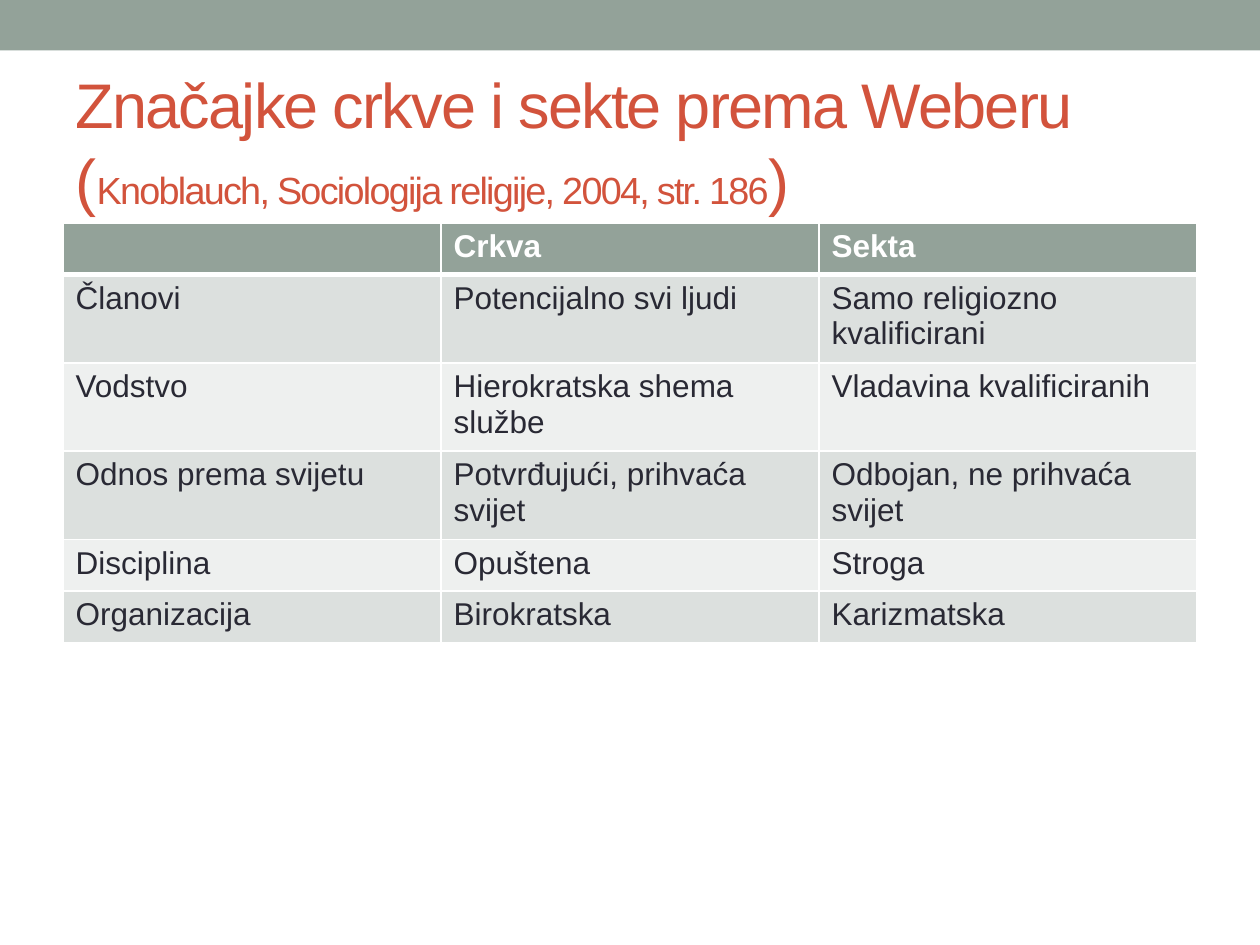
"""Build a slide with a table comparing church and sect after Weber."""
from dataclasses import dataclass

from lxml import etree
from pptx import Presentation
from pptx.dml.color import RGBColor
from pptx.enum.shapes import MSO_SHAPE
from pptx.enum.text import MSO_ANCHOR, MSO_AUTO_SIZE, PP_ALIGN
from pptx.oxml.ns import qn
from pptx.util import Inches, Pt

RECTANGLE = MSO_SHAPE.RECTANGLE
MIDDLE = MSO_ANCHOR.MIDDLE
NO_AUTOFIT = MSO_AUTO_SIZE.NONE
LEFT = PP_ALIGN.LEFT

SAGE = RGBColor(0x93, 0xA2, 0x99)
BAND_DARK = RGBColor(0xDC, 0xE0, 0xDE)
BAND_LIGHT = RGBColor(0xEE, 0xF0, 0xEF)
WHITE = RGBColor(0xFF, 0xFF, 0xFF)
INK = RGBColor(0x29, 0x29, 0x34)
RUST = RGBColor(0xD2, 0x53, 0x3C)
FONT = "Arial"


@dataclass(frozen=True)
class TitlePart:
    text: str
    size: float


@dataclass(frozen=True)
class TableRow:
    texts: tuple[str, str, str]
    height: float


TITLE_PARTS = (
    TitlePart("Značajke crkve i sekte prema Weberu (", 36),
    TitlePart("Knoblauch, Sociologija religije, 2004, str. 186", 21.6),
    TitlePart(")", 36),
)
ROWS = (
    TableRow(("", "Crkva", "Sekta"), 0.41),
    TableRow(("Članovi", "Potencijalno svi ljudi", "Samo religiozno kvalificirani"), 0.7),
    TableRow(("Vodstvo", "Hierokratska shema službe", "Vladavina kvalificiranih"), 0.7),
    TableRow(("Odnos prema svijetu", "Potvrđujući, prihvaća svijet", "Odbojan, ne prihvaća svijet"), 0.7),
    TableRow(("Disciplina", "Opuštena", "Stroga"), 0.41),
    TableRow(("Organizacija", "Birokratska", "Karizmatska"), 0.41),
)


def format_font(font, color: RGBColor, size: float, bold: bool = False) -> None:
    for name, value in {"name": FONT, "size": Pt(size), "bold": bold}.items():
        setattr(font, name, value)
    font.color.rgb = color


def draw_top_band(page) -> None:
    band = page.shapes.add_shape(RECTANGLE, 0, 0, Inches(10), Inches(0.4))
    band.shadow.inherit = False
    band.fill.solid()
    band.fill.fore_color.rgb = SAGE
    band.line.fill.background()


def draw_title(page) -> None:
    title = page.shapes.title
    place = {"left": 0.5, "top": 0.58, "width": 9, "height": 1.08}
    for name, value in place.items():
        setattr(title, name, Inches(value))
    frame = title.text_frame
    settings = {"word_wrap": True, "auto_size": NO_AUTOFIT, "vertical_anchor": MIDDLE}
    for name, value in settings.items():
        setattr(frame, name, value)
    para = frame.paragraphs[0]
    para.alignment = LEFT
    for part in TITLE_PARTS:
        span = para.add_run()
        span.text = part.text
        format_font(span.font, RUST, part.size)
        span._r.get_or_add_rPr().set("spc", "-100")


def add_borders(cell, widths: dict[str, float]) -> None:
    properties = cell._tc.get_or_add_tcPr()
    for side, width in widths.items():
        line = etree.SubElement(properties, qn(f"a:ln{side}"), w=str(Pt(width)))
        fill = etree.SubElement(line, qn("a:solidFill"))
        etree.SubElement(fill, qn("a:srgbClr"), val=str(WHITE))


def format_cell(cell, text: str, row_index: int) -> None:
    header = row_index == 0
    widths = {"L": 1, "R": 1, "T": 3 if row_index == 1 else 1, "B": 3 if header else 1}
    add_borders(cell, widths)
    cell.fill.solid()
    band = BAND_DARK if row_index % 2 else BAND_LIGHT
    cell.fill.fore_color.rgb = SAGE if header else band
    cell.text = text
    format_font(cell.text_frame.paragraphs[0].font, WHITE if header else INK, 18, header)


def draw_table(page) -> None:
    height = sum(row.height for row in ROWS)
    frame = page.shapes.add_table(
        len(ROWS), 3, Inches(0.5), Inches(1.77), Inches(9), Inches(height)
    )
    table = frame.table
    table.horz_banding = False
    for row_index, row in enumerate(ROWS):
        table.rows[row_index].height = Inches(row.height)
        for column_index, text in enumerate(row.texts):
            format_cell(table.cell(row_index, column_index), text, row_index)


def main() -> None:
    deck = Presentation()
    deck.slide_width, deck.slide_height = Inches(10), Inches(7.5)
    page = deck.slides.add_slide(deck.slide_layouts[5])
    draw_top_band(page)
    draw_title(page)
    draw_table(page)
    deck.save("out.pptx")


if __name__ == "__main__":
    main()
